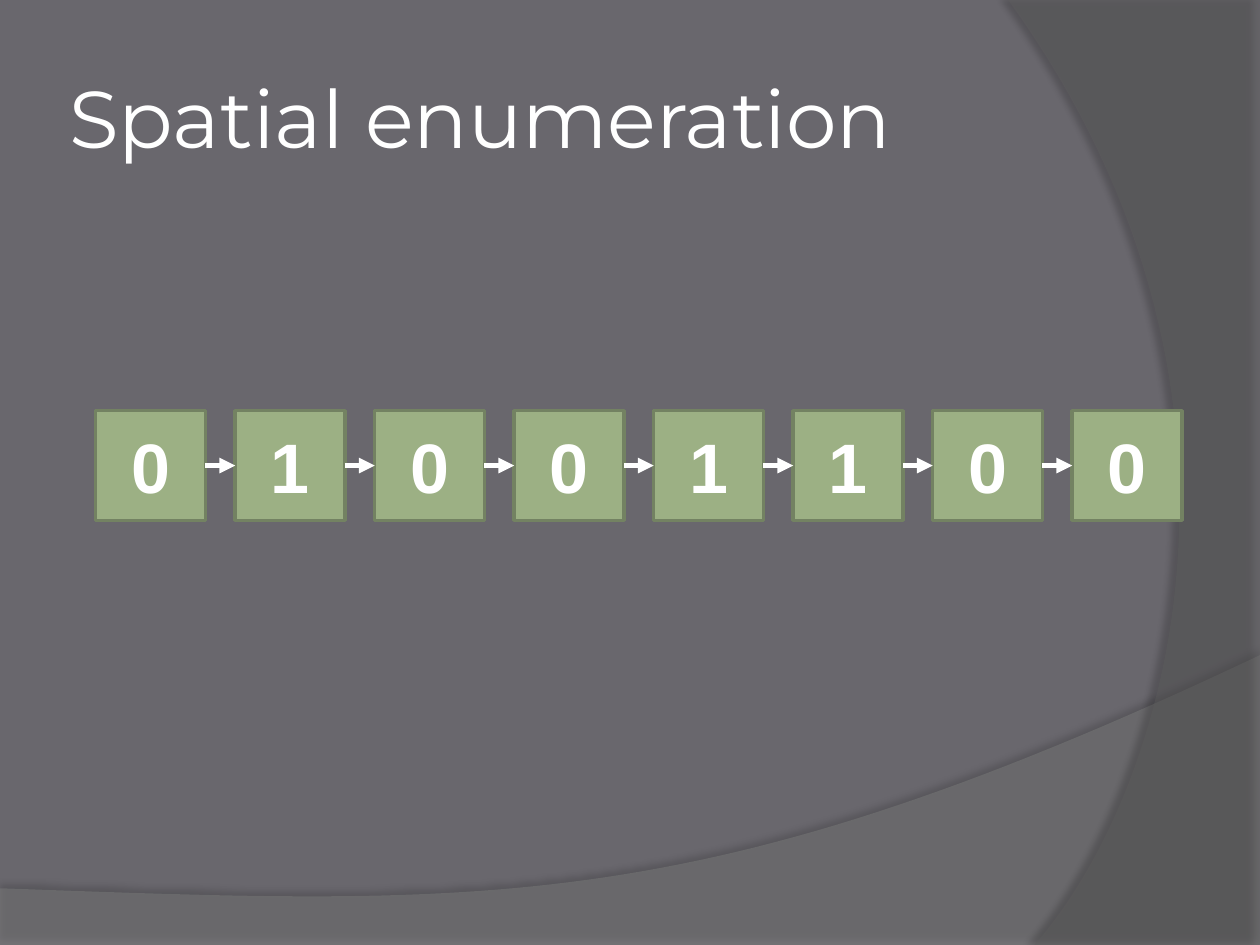
"""Build a slide showing spatial enumeration as a chain of binary cells."""
import pptx
import pptx.dml.color
import pptx.enum.shapes
import pptx.enum.text
import pptx.oxml
import pptx.oxml.ns
import pptx.util

Inches = pptx.util.Inches
Pt = pptx.util.Pt
RGBColor = pptx.dml.color.RGBColor

TITLE = "Spatial enumeration"
BITS = ["0", "1", "0", "0", "1", "1", "0", "0"]

BACKGROUND = RGBColor(0x69, 0x67, 0x6D)
WHITE = RGBColor(0xFF, 0xFF, 0xFF)
CELL_FILL = RGBColor(0x9C, 0xB0, 0x84)
CELL_LINE = RGBColor(0x73, 0x82, 0x62)
HILL_FILL = RGBColor(0x7F, 0x7F, 0x7F)
SIDE_FILL = RGBColor(0x5E, 0x5E, 0x5E)

SWEEPS = [
    dict(curve=[(10, 5.2), (5.59, 7.29), (3.91, 7.19), (0, 7.05)],
         corners=[(0, 7.5), (10, 7.5)], color=HILL_FILL, opacity=45,
         shadow=dict(opacity=35, blur=4, distance=3.5, angle=270)),
    dict(curve=[(8.21, 7.5), (9.35, 6.19), (10.18, 3), (8, 0)],
         corners=[(10, 0), (10, 7.5)], color=SIDE_FILL, opacity=40,
         shadow=dict(opacity=45, blur=4, distance=4, angle=180)),
]

CELL_SIZE = 0.87
CELL_TOP = 3.26
FIRST_LEFT, LAST_LEFT = 0.76, 8.51
CURVE_STEPS = 60


def curve_points(controls):
    points = []
    for step in range(CURVE_STEPS + 1):
        t = step / CURVE_STEPS
        weights = [(1 - t) ** 3, 3 * t * (1 - t) ** 2, 3 * t ** 2 * (1 - t), t ** 3]
        points.append(tuple(sum(weight * point[axis] for weight, point in zip(weights, controls))
                            for axis in (0, 1)))
    return points


def add_effects(shape, content=""):
    shape.element.spPr.append(pptx.oxml.parse_xml(
        f'<a:effectLst {pptx.oxml.ns.nsdecls("a")}>{content}</a:effectLst>'))


def add_sweep(page, curve, corners, color, opacity, shadow):
    points = [(Inches(x), Inches(y)) for x, y in curve_points(curve) + corners]
    builder = page.shapes.build_freeform(*points[0])
    builder.add_line_segments(points[1:], close=True)
    sweep = builder.convert_to_shape()
    sweep.fill.solid()
    sweep.fill.fore_color.rgb = color
    sweep.line.fill.background()
    tint = sweep.element.spPr.find(".//" + pptx.oxml.ns.qn("a:srgbClr"))
    alpha = '<a:alpha {} val="{}"/>'
    tint.append(pptx.oxml.parse_xml(alpha.format(pptx.oxml.ns.nsdecls("a"), opacity * 1000)))
    add_effects(sweep, (
        f'<a:outerShdw blurRad="{Pt(shadow["blur"])}" dist="{Pt(shadow["distance"])}" '
        f'dir="{shadow["angle"] * 60000}" algn="ctr" rotWithShape="0"><a:srgbClr val="000000">'
        f'{alpha.format("", shadow["opacity"] * 1000)}</a:srgbClr></a:outerShdw>'))


def write_text(box, text, *, font, size, align, bold=False):
    frame = box.text_frame
    frame.word_wrap = True
    frame.vertical_anchor = pptx.enum.text.MSO_ANCHOR.MIDDLE
    frame.margin_left = frame.margin_right = Inches(0.05)
    frame.margin_top = frame.margin_bottom = Inches(0.05)
    para = frame.paragraphs[0]
    para.alignment = align
    span = para.add_run()
    span.text = text
    span.font.name = font
    span.font.size = Pt(size)
    span.font.bold = bold
    span.font.color.rgb = WHITE


def add_cell(page, left, bit):
    cell = page.shapes.add_shape(pptx.enum.shapes.MSO_SHAPE.RECTANGLE, Inches(left),
                                 Inches(CELL_TOP), Inches(CELL_SIZE), Inches(CELL_SIZE))
    cell.shadow.inherit = False
    cell.fill.solid()
    cell.fill.fore_color.rgb = CELL_FILL
    cell.line.color.rgb = CELL_LINE
    cell.line.width = Pt(2)
    write_text(cell, bit, font="Arial", size=40, bold=True,
               align=pptx.enum.text.PP_ALIGN.CENTER)


def add_arrow(page, start, end):
    middle = Inches(CELL_TOP + CELL_SIZE / 2)
    arrow = page.shapes.add_connector(pptx.enum.shapes.MSO_CONNECTOR.STRAIGHT,
                                      Inches(start), middle, Inches(end), middle)
    arrow.line.color.rgb = WHITE
    arrow.line.width = Pt(3)
    arrow.line._get_or_add_ln().append(pptx.oxml.parse_xml(
        f'<a:tailEnd {pptx.oxml.ns.nsdecls("a")} type="triangle"/>'))
    add_effects(arrow)


def main():
    deck = pptx.Presentation()
    deck.slide_width, deck.slide_height = Inches(10), Inches(7.5)
    page = deck.slides.add_slide(deck.slide_layouts[5])
    page.background.fill.solid()
    page.background.fill.fore_color.rgb = BACKGROUND

    for sweep in SWEEPS:
        add_sweep(page, **sweep)

    title = page.shapes.title
    title.element.getparent().append(title.element)
    title.left, title.top = Inches(0.5), Inches(0.3)
    title.width, title.height = Inches(8.17), Inches(1.25)
    write_text(title, TITLE, font="Montserrat", size=46,
               align=pptx.enum.text.PP_ALIGN.LEFT)

    pitch = (LAST_LEFT - FIRST_LEFT) / (len(BITS) - 1)
    lefts = [FIRST_LEFT + index * pitch for index in range(len(BITS))]
    for left, bit in zip(lefts, BITS):
        add_cell(page, left, bit)
    for left, following in zip(lefts, lefts[1:]):
        add_arrow(page, left + CELL_SIZE, following)

    deck.save("out.pptx")


if __name__ == "__main__":
    main()
